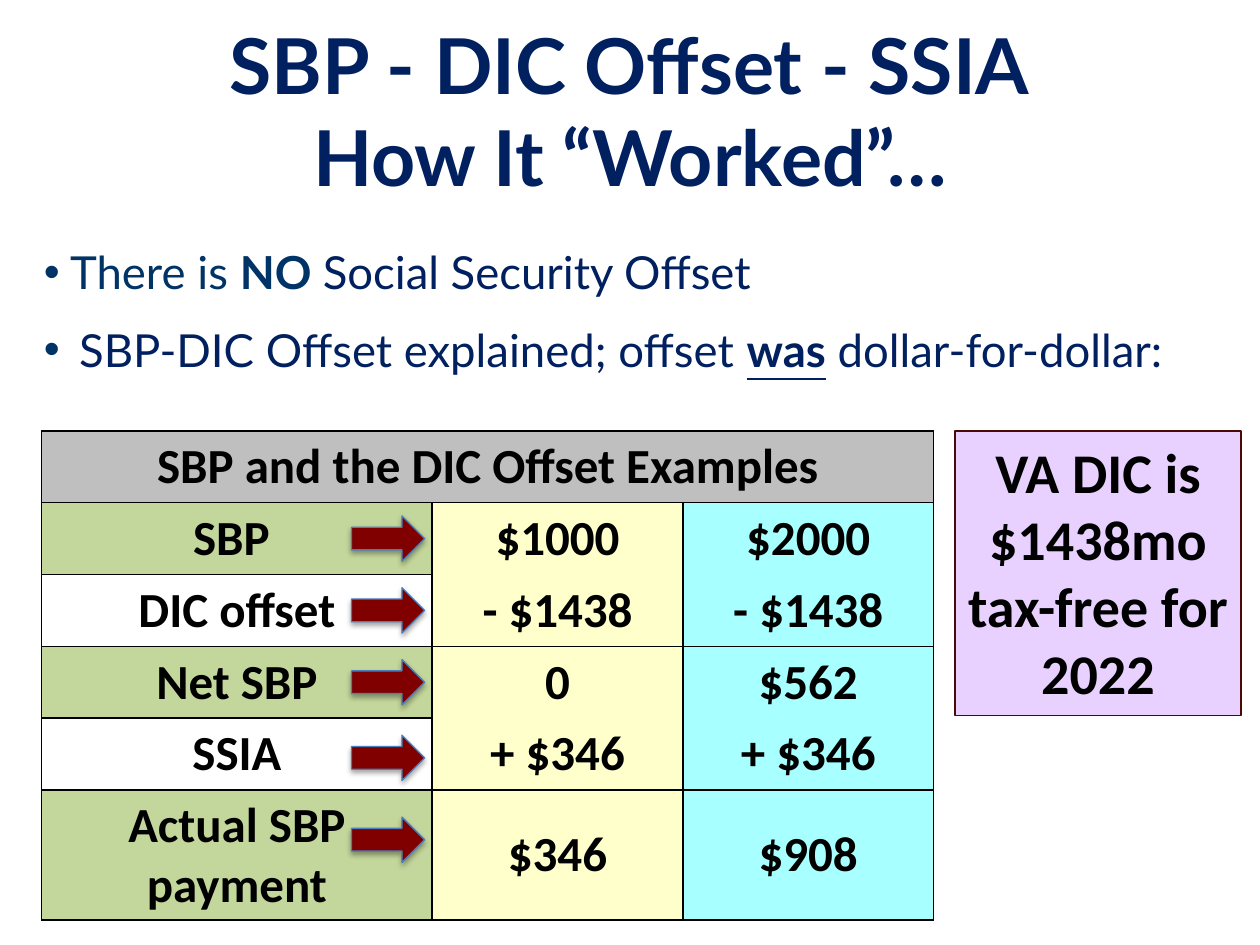
from dataclasses import dataclass

from lxml.etree import SubElement
from pptx import Presentation
from pptx.dml.color import RGBColor
from pptx.enum.shapes import MSO_SHAPE
from pptx.enum.text import MSO_ANCHOR, PP_ALIGN
from pptx.oxml.ns import qn
from pptx.util import Inches, Pt


@dataclass(frozen=True)
class Theme:
    heading_font: str = "Lato"
    table_font: str = "Calibri"
    title_size: int = 44
    bullet_size: int = 26
    table_size: int = 28
    note_size: int = 32
    navy: str = "002060"
    blue: str = "003366"
    black: str = "000000"
    header: str = "BFBFBF"
    label: str = "C3D69B"
    first: str = "FFFFCC"
    second: str = "A7FFFF"
    arrow: str = "800000"
    arrow_line: str = "4B7EBC"
    note: str = "E8D1FF"
    note_line: str = "490A03"


T = Theme()
LEFT, TOP = 0.33, 3.42
COLS = (3.1, 1.99, 1.99)
ROW, LAST_ROW = 0.57, 0.98
ROWS = (
    ("SBP ", "$1000", "$2000"),
    ("DIC offset", "- $1438", "- $1438"),
    ("Net SBP", "0", "$562"),
    ("SSIA", "+ $346", "+ $346"),
    ("Actual SBP payment", "$346", "$908"),
)
ARROW_NUDGES = (0, 0, 0, 0.03, 0.32)


def rgb(code):
    return RGBColor.from_string(code)


def add_run(p, text, font, size, color, bold=False, underline=False):
    r = p.add_run()
    r.text = text
    r.font.name = font
    r.font.size = Pt(size)
    r.font.color.rgb = rgb(color)
    r.font.bold = bold
    r.font.underline = underline


def add_box(s, x, y, w, h, anchor=MSO_ANCHOR.TOP):
    tf = s.shapes.add_textbox(*map(Inches, (x, y, w, h))).text_frame
    tf.word_wrap = True
    tf.vertical_anchor = anchor
    return tf


def add_title(s, lines):
    tf = add_box(s, 0.15, 0.08, 9.7, 1.58, MSO_ANCHOR.MIDDLE)
    for i, line in enumerate(lines):
        p = tf.add_paragraph() if i else tf.paragraphs[0]
        p.alignment = PP_ALIGN.CENTER
        add_run(p, line, T.heading_font, T.title_size, T.navy, True)


def add_bullet(p, indent, runs):
    pPr = p._p.get_or_add_pPr()
    pPr.set("marL", str(Inches(indent)))
    pPr.set("indent", str(-Inches(indent)))
    p.space_after = Pt(T.bullet_size / 2)
    color = SubElement(pPr, qn("a:buClr"))
    SubElement(color, qn("a:srgbClr"), val=T.blue)
    SubElement(pPr, qn("a:buFont"), typeface="Arial")
    SubElement(pPr, qn("a:buChar"), char="•")
    for text, *style in runs:
        add_run(p, text, T.heading_font, T.bullet_size, *style)


def set_borders(cell, hidden=()):
    tcPr = cell._tc.get_or_add_tcPr()
    for i, side in enumerate("LRTB"):
        ln = tcPr.makeelement(qn(f"a:ln{side}"), {"w": str(Pt(1))})
        tcPr.insert(i, ln)
        if side in hidden:
            SubElement(ln, qn("a:noFill"))
        else:
            fill = SubElement(ln, qn("a:solidFill"))
            SubElement(fill, qn("a:srgbClr"), val=T.black)


def fill_cell(cell, text, color, hidden=()):
    cell.vertical_anchor = MSO_ANCHOR.MIDDLE
    p = cell.text_frame.paragraphs[0]
    p.alignment = PP_ALIGN.CENTER
    if text:
        add_run(p, text, T.table_font, T.table_size, T.black, True)
    if color:
        cell.fill.solid()
        cell.fill.fore_color.rgb = rgb(color)
    else:
        cell.fill.background()
    set_borders(cell, hidden)


def add_offset_table(s):
    heights = [ROW] * len(ROWS) + [LAST_ROW]
    size = (LEFT, TOP, sum(COLS), sum(heights))
    table = s.shapes.add_table(len(heights), len(COLS), *map(Inches, size)).table
    table.first_row = table.horz_banding = False
    for column, width in zip(table.columns, COLS):
        column.width = Inches(width)
    for row, height in zip(table.rows, heights):
        row.height = Inches(height)
    for c in range(len(COLS)):
        fill_cell(table.cell(0, c), "" if c else "SBP and the DIC Offset Examples", T.header)
    table.cell(0, 0).merge(table.cell(0, len(COLS) - 1))
    for i, texts in enumerate(ROWS):
        colors = (None if i % 2 else T.label, T.first, T.second)
        open_side = "" if i == len(ROWS) - 1 else "BT"[i % 2]
        for c, (text, color) in enumerate(zip(texts, colors)):
            fill_cell(table.cell(i + 1, c), text, color, open_side if c else "")


def add_shadow(sp):
    effects = SubElement(sp._element.spPr, qn("a:effectLst"))
    shadow = SubElement(effects, qn("a:outerShdw"), blurRad=str(Pt(3.1)),
                        dist=str(Pt(1.8)), dir=str(90 * 60000), rotWithShape="0")
    color = SubElement(shadow, qn("a:srgbClr"), val=T.black)
    SubElement(color, qn("a:alpha"), val="35000")


def add_filled(shapes, kind, x, y, w, h, fill, line):
    sp = shapes.add_shape(kind, *map(Inches, (x, y, w, h)))
    sp.fill.solid()
    sp.fill.fore_color.rgb = rgb(fill)
    sp.line.color.rgb = rgb(line)
    sp.line.width = Pt(0.75)
    return sp


def add_arrows(s):
    group = s.shapes.add_group_shape()
    w, h = 0.58, 0.36
    x = LEFT + COLS[0] - w - 0.06
    for i, nudge in enumerate(ARROW_NUDGES):
        y = TOP + (i + 1) * ROW + (ROW - h) / 2 + nudge - (0.21 if i == 4 else 0)
        add_shadow(add_filled(group.shapes, MSO_SHAPE.RIGHT_ARROW, x, y, w, h,
                              T.arrow, T.arrow_line))


def add_note(s, text):
    sp = add_filled(s.shapes, MSO_SHAPE.RECTANGLE, 7.58, TOP, 2.27, 2.26,
                    T.note, T.note_line)
    sp.shadow.inherit = False
    tf = sp.text_frame
    tf.word_wrap = True
    tf.vertical_anchor = MSO_ANCHOR.TOP
    p = tf.paragraphs[0]
    p.alignment = PP_ALIGN.CENTER
    add_run(p, text, T.table_font, T.note_size, T.black, True)


def main():
    prs = Presentation()
    prs.slide_width, prs.slide_height = Inches(10), Inches(7.5)
    s = prs.slides.add_slide(prs.slide_layouts[6])
    add_title(s, ("SBP - DIC Offset - SSIA", "How It “Worked”…"))
    tf = add_box(s, 0.25, 1.89, 9.6, 4.3)
    add_bullet(tf.paragraphs[0], 0, (
        (" There is ", T.blue),
        ("NO ", T.blue, True),
        ("Social Security Offset", T.navy),
    ))
    add_bullet(tf.add_paragraph(), 0.28, (
        ("SBP-DIC Offset explained; offset ", T.navy),
        ("was", T.navy, True, True),
        (" dollar-for-dollar:", T.navy),
    ))
    add_offset_table(s)
    add_arrows(s)
    add_note(s, "VA DIC is $1438mo tax-free for 2022")
    prs.save("out.pptx")


if __name__ == "__main__":
    main()
